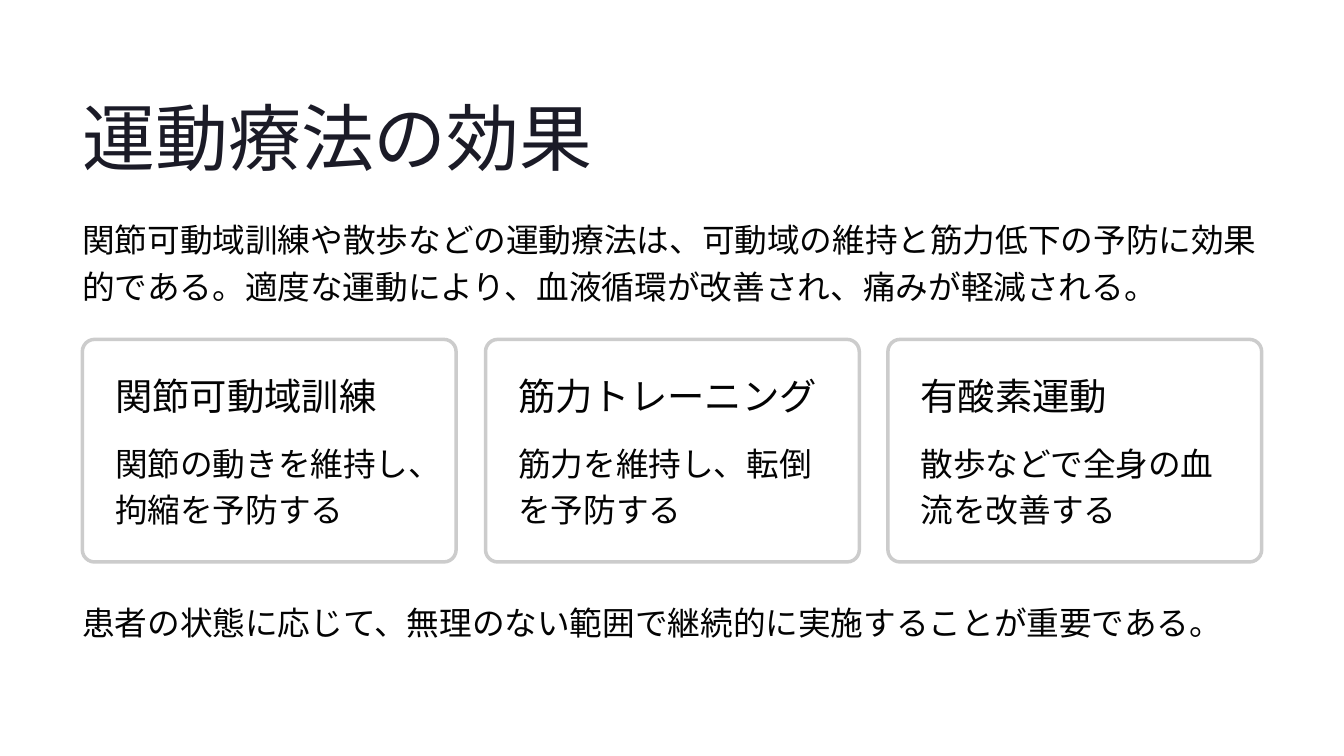
"""Build a slide on the effects of exercise therapy with three cards."""
from dataclasses import dataclass

from lxml import etree
from pptx import Presentation
from pptx.dml.color import RGBColor
from pptx.enum.lang import MSO_LANGUAGE_ID
from pptx.enum.shapes import MSO_SHAPE
from pptx.enum.text import MSO_ANCHOR, MSO_AUTO_SIZE, PP_ALIGN
from pptx.oxml.ns import qn
from pptx.shapes.base import BaseShape
from pptx.slide import Slide
from pptx.util import Emu, Pt

ROUNDED = MSO_SHAPE.ROUNDED_RECTANGLE
TOP = MSO_ANCHOR.TOP
FIXED_SIZE = MSO_AUTO_SIZE.NONE
LEFT = PP_ALIGN.LEFT
JAPANESE = MSO_LANGUAGE_ID.JAPANESE
TITLE_ONLY = 5
EMU_PER_PX = 9144


@dataclass(frozen=True)
class TextStyle:
    font: str
    size: float
    line_height: float
    color: RGBColor


@dataclass(frozen=True)
class Theme:
    ink: RGBColor = RGBColor(0x03, 0x03, 0x03)
    border: RGBColor = RGBColor(0xCC, 0xCC, 0xCC)
    card_fill: RGBColor = RGBColor(0xFF, 0xFF, 0xFF)
    card_opacity: int = 95
    border_width: float = 3
    corner: float = 0.055
    title: TextStyle = TextStyle("Inter", 62.5, 78.5, RGBColor(0x1B, 0x1B, 0x27))
    heading: TextStyle = TextStyle("Inter", 32, 39, ink)
    body: TextStyle = TextStyle("Karla", 28, 40, ink)


@dataclass(frozen=True)
class Box:
    left: int
    top: int
    width: int
    height: int

    def emu(self) -> tuple[Emu, Emu, Emu, Emu]:
        """Return the box in EMU."""
        lengths = (self.left, self.top, self.width, self.height)
        return tuple(Emu(length * EMU_PER_PX) for length in lengths)


@dataclass(frozen=True)
class Card:
    heading: str
    effect: str


THEME = Theme()
MARGIN = 98
CONTENT_WIDTH = 1404
CARD_TOP = 404
CARD_WIDTH = 445
CARD_HEIGHT = 265
CARD_PADDING = 39

TITLE = "運動療法の効果"
INTRO = (
    "関節可動域訓練や散歩などの運動療法は、可動域の維持と筋力低下の予防に効果的である。"
    "適度な運動により、血液循環が改善され、痛みが軽減される。"
)
ADVICE = "患者の状態に応じて、無理のない範囲で継続的に実施することが重要である。"
CARDS = (
    Card("関節可動域訓練", "関節の動きを維持し、拘縮を予防する"),
    Card("筋力トレーニング", "筋力を維持し、転倒を予防する"),
    Card("有酸素運動", "散歩などで全身の血流を改善する"),
)


def write(holder: BaseShape, text: str, style: TextStyle, wrap: bool) -> None:
    """Put one styled paragraph into a shape."""
    frame = holder.text_frame
    frame.text = text
    frame.word_wrap = wrap
    frame.auto_size = FIXED_SIZE
    frame.vertical_anchor = TOP
    frame.margin_left = frame.margin_top = frame.margin_right = frame.margin_bottom = 0
    paragraph = frame.paragraphs[0]
    paragraph.alignment = LEFT
    paragraph.line_spacing = Pt(style.line_height)
    font = paragraph.runs[0].font
    font.name = style.font
    font.size = Pt(style.size)
    font.color.rgb = style.color
    font.language_id = JAPANESE


def add_title(slide: Slide, text: str, box: Box) -> None:
    """Place and fill the title placeholder."""
    title = slide.shapes.title
    title.left, title.top, title.width, title.height = box.emu()
    write(title, text, THEME.title, wrap=False)


def add_text(slide: Slide, text: str, box: Box, style: TextStyle, wrap: bool) -> None:
    """Add a text box."""
    write(slide.shapes.add_textbox(*box.emu()), text, style, wrap)


def add_card(slide: Slide, card: Card, left: int) -> None:
    """Add a bordered card with its heading and effect."""
    box = Box(left, CARD_TOP, CARD_WIDTH, CARD_HEIGHT)
    panel = slide.shapes.add_shape(ROUNDED, *box.emu())
    panel.shadow.inherit = False
    panel.adjustments[0] = THEME.corner
    panel.fill.solid()
    panel.fill.fore_color.rgb = THEME.card_fill
    fill_color = panel.fill._xPr.find(qn("a:solidFill"))[0]
    etree.SubElement(fill_color, qn("a:alpha"), val=str(THEME.card_opacity * 1000))
    panel.line.color.rgb = THEME.border
    panel.line.width = Pt(THEME.border_width)

    inner_left = left + CARD_PADDING
    inner_width = CARD_WIDTH - 2 * CARD_PADDING
    heading_box = Box(inner_left, CARD_TOP + CARD_PADDING, inner_width, 55)
    effect_box = Box(inner_left, CARD_TOP + 115, inner_width, 112)
    add_text(slide, card.heading, heading_box, THEME.heading, wrap=False)
    add_text(slide, card.effect, effect_box, THEME.body, wrap=True)


def main() -> None:
    """Build and save the slide."""
    deck = Presentation()
    deck.slide_width = Emu(1600 * EMU_PER_PX)
    deck.slide_height = Emu(900 * EMU_PER_PX)
    slide = deck.slides.add_slide(deck.slide_layouts[TITLE_ONLY])

    add_title(slide, TITLE, Box(MARGIN, 105, 873, 109))
    add_text(slide, INTRO, Box(MARGIN, 253, CONTENT_WIDTH, 112), THEME.body, wrap=True)
    card_pitch = (CONTENT_WIDTH - CARD_WIDTH) / (len(CARDS) - 1)
    for index, card in enumerate(CARDS):
        add_card(slide, card, MARGIN + round(index * card_pitch))
    add_text(slide, ADVICE, Box(MARGIN, 709, CONTENT_WIDTH, 56), THEME.body, wrap=False)

    deck.save("out.pptx")


if __name__ == "__main__":
    main()
